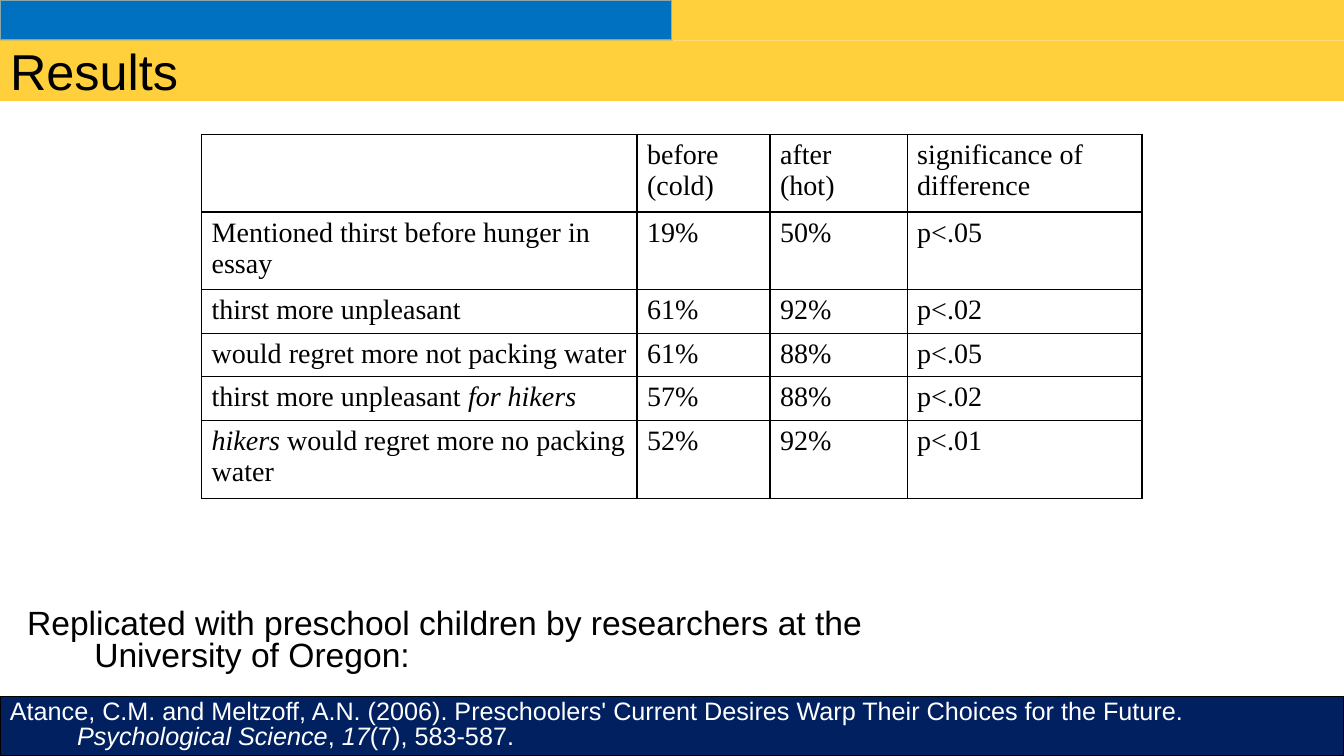
from dataclasses import dataclass
from typing import Any, Optional

from lxml.etree import SubElement as Sub
from pptx import Presentation as Deck
from pptx.dml.color import RGBColor as Color
from pptx.enum.shapes import MSO_SHAPE as Kind
from pptx.enum.text import MSO_ANCHOR as Anchor, MSO_AUTO_SIZE as Fit, PP_ALIGN as Align
from pptx.oxml.ns import qn
from pptx.util import Pt


@dataclass(frozen=True)
class Theme:
    sans: str = "Arial"
    serif: str = "Times New Roman"
    black: str = "000000"
    white: str = "FFFFFF"
    blue: str = "0070C0"
    navy: str = "002060"
    gold: str = "FFD03B"
    gray: str = "8AA6A8"
    head: float = 36
    note: float = 24
    grid: float = 20
    cite: float = 18


@dataclass(frozen=True)
class Box:
    left: float
    top: float
    width: float
    height: float

    def args(self) -> list:
        return [Pt(self.left), Pt(self.top), Pt(self.width), Pt(self.height)]


@dataclass(frozen=True)
class Bar:
    box: Box
    fill: str
    line: Optional[str] = None
    weight: float = 0


@dataclass(frozen=True)
class Type:
    face: str
    size: float
    color: str


LOOK = Theme()
WIDE, HIGH = 960, 540
HALF = WIDE / 2
BLUE = Bar(Box(0, 0, HALF, 28.8), LOOK.blue, LOOK.gray, 2)
GOLD = Bar(Box(HALF, 0, HALF, 28.8), LOOK.gold)
FOOT = Bar(Box(0, 497.5, WIDE, 42.5), LOOK.navy, LOOK.black, 0.75)
HEAD = Box(0, 28.8, WIDE, 43.2)
NOTE = Box(12.24, 432, 672, 54)
COLS = [311.04, 95.04, 97.92, 167.76]
ROWS = [55.44, 55.44, 31.2, 31.2, 31.2, 55.44]
GRID = Box(144, 96, sum(COLS), sum(ROWS))
CELLS = [
    ["", "before\n(cold)", "after\n(hot)", "significance of difference"],
    ["Mentioned thirst before hunger in essay", "19%", "50%", "p<.05"],
    ["thirst more unpleasant", "61%", "92%", "p<.02"],
    ["would regret more not packing water", "61%", "88%", "p<.05"],
    ["thirst more unpleasant *for hikers*", "57%", "88%", "p<.02"],
    ["*hikers* would regret more no packing water", "52%", "92%", "p<.01"],
]
CLAIM = "Replicated with preschool children by researchers at the University of Oregon:"
CITE = (
    "Atance, C.M. and Meltzoff, A.N. (2006). Preschoolers' Current Desires Warp "
    "Their Choices for the Future. *Psychological Science*, *17*(7), 583-587."
)


def apply(item: Any, form: dict) -> None:
    for name, value in form.items():
        setattr(item, name, value)


def paint(fill: Any, color: str) -> None:
    fill.solid()
    fill.fore_color.rgb = Color.from_string(color)


def write(frame: Any, text: str, kind: Type, form: dict) -> None:
    for row, line in enumerate(text.split("\n")):
        para = frame.add_paragraph() if row else frame.paragraphs[0]
        apply(para, {"alignment": Align.LEFT, **form})
        apply(para.font, {"name": kind.face, "size": Pt(kind.size)})
        for spot, part in enumerate(line.split("*")):
            if part:
                run = para.add_run()
                run.text = part
                apply(run.font, {"name": kind.face, "size": Pt(kind.size), "italic": spot % 2 == 1})
                run.font.color.rgb = Color.from_string(kind.color)


def hang(frame: Any, text: str, kind: Type) -> None:
    apply(frame, {"word_wrap": True, "auto_size": Fit.NONE, "vertical_anchor": Anchor.TOP})
    write(frame, text, kind, {"line_spacing": 0.8})
    props = frame.paragraphs[0].runs[0].font
    props.bold = False
    shift = frame.paragraphs[0]._p.get_or_add_pPr()
    shift.set("marL", str(Pt(48)))
    shift.set("indent", str(Pt(-48)))


def draw(slide: Any, bar: Bar) -> Any:
    shape = slide.shapes.add_shape(Kind.RECTANGLE, *bar.box.args())
    shape.shadow.inherit = False
    paint(shape.fill, bar.fill)
    if bar.line:
        paint(shape.line.fill, bar.line)
        shape.line.width = Pt(bar.weight)
    else:
        shape.line.fill.background()
    return shape


def edge(cell: Any) -> None:
    props = cell._tc.get_or_add_tcPr()
    for spot, side in enumerate(("lnL", "lnR", "lnT", "lnB")):
        line = props.makeelement(qn("a:" + side), {"w": str(Pt(1))})
        props.insert(spot, line)
        Sub(Sub(line, qn("a:solidFill")), qn("a:srgbClr"), val=LOOK.black)


def title(slide: Any) -> None:
    head = slide.shapes.title
    head.element.getparent().append(head.element)
    apply(head, dict(zip(("left", "top", "width", "height"), HEAD.args())))
    paint(head.fill, LOOK.gold)
    apply(head.text_frame, {"auto_size": Fit.NONE, "vertical_anchor": Anchor.MIDDLE})
    write(head.text_frame, "Results", Type(LOOK.sans, LOOK.head, LOOK.black), {})


def table(slide: Any) -> None:
    grid = slide.shapes.add_table(len(ROWS), len(COLS), *GRID.args()).table
    apply(grid, {"first_row": False, "horz_banding": False})
    for col, width in zip(grid.columns, COLS):
        col.width = Pt(width)
    kind = Type(LOOK.serif, LOOK.grid, LOOK.black)
    for row, height, texts in zip(grid.rows, ROWS, CELLS):
        row.height = Pt(height)
        for cell, text in zip(row.cells, texts):
            paint(cell.fill, LOOK.white)
            edge(cell)
            write(cell.text_frame, text, kind, {})


def main() -> None:
    deck = Deck()
    apply(deck, {"slide_width": Pt(WIDE), "slide_height": Pt(HIGH)})
    slide = deck.slides.add_slide(deck.slide_layouts[5])
    for bar in (BLUE, GOLD):
        draw(slide, bar)
    title(slide)
    table(slide)
    note = slide.shapes.add_textbox(*NOTE.args())
    hang(note.text_frame, CLAIM, Type(LOOK.sans, LOOK.note, LOOK.black))
    foot = draw(slide, FOOT)
    hang(foot.text_frame, CITE, Type(LOOK.sans, LOOK.cite, LOOK.white))
    deck.save("out.pptx")


if __name__ == "__main__":
    main()
